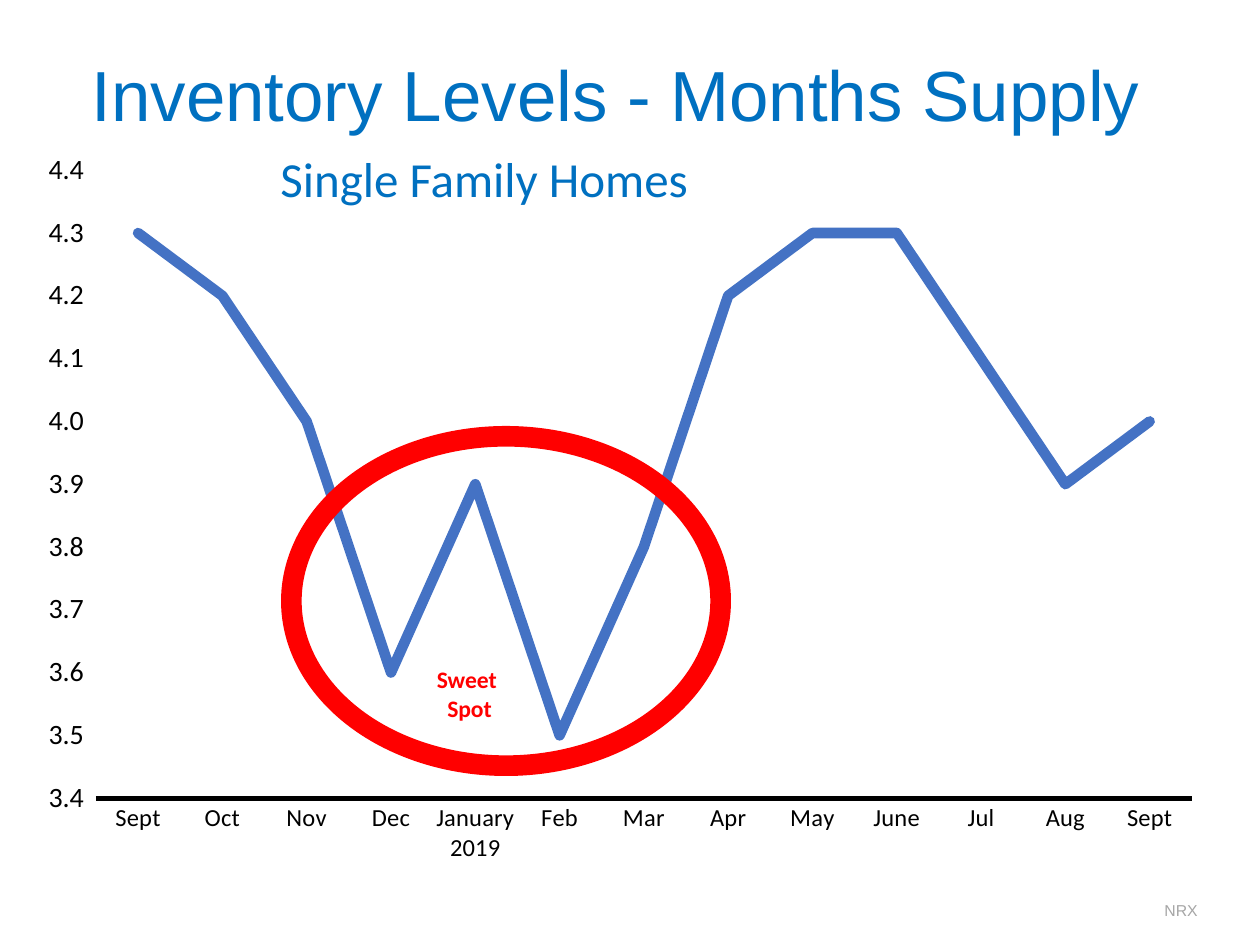
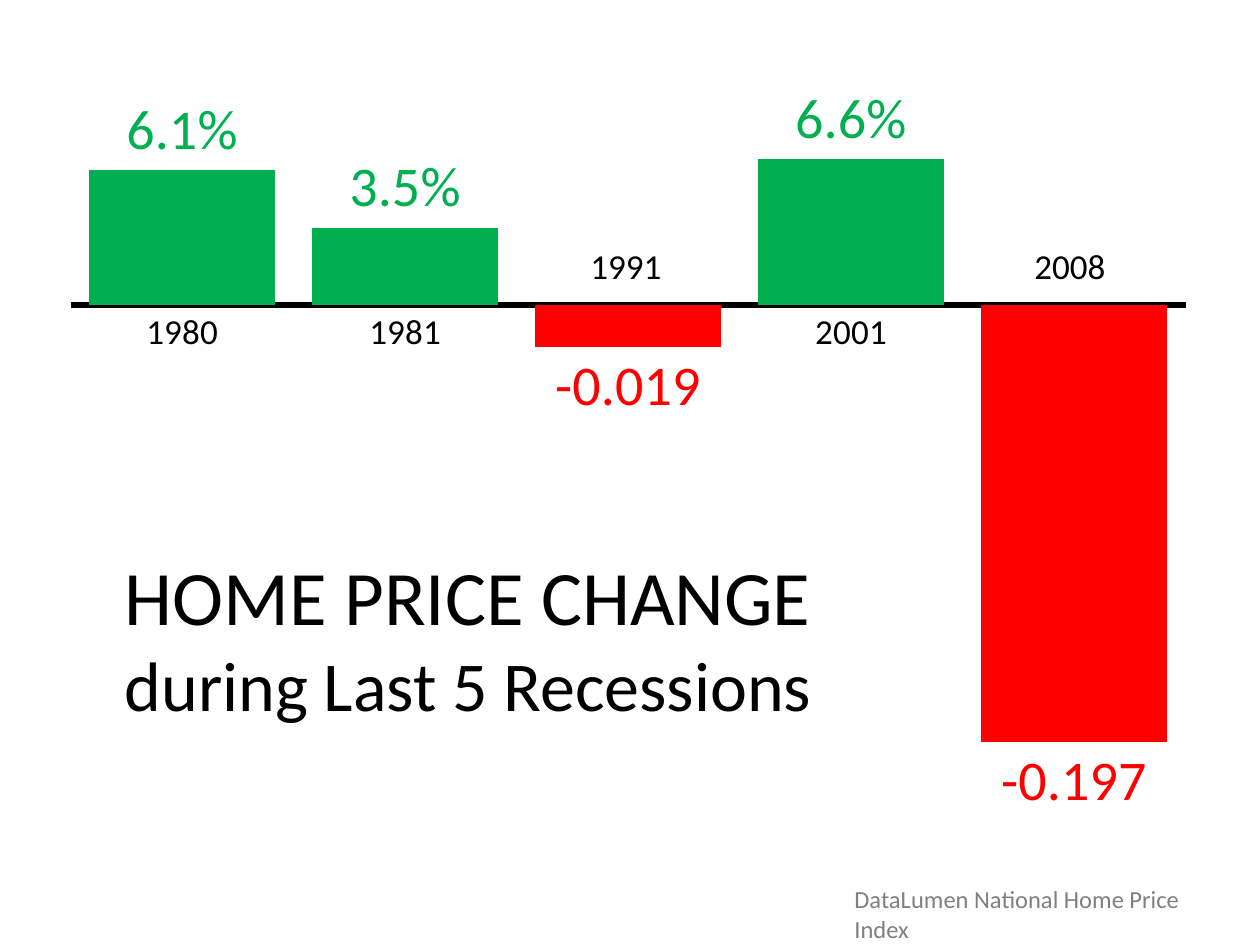
from lxml.etree import SubElement
from pptx import Presentation
from pptx.chart.data import CategoryChartData
from pptx.dml.color import RGBColor
from pptx.enum.chart import XL_CHART_TYPE, XL_LABEL_POSITION, XL_TICK_MARK
from pptx.enum.shapes import MSO_SHAPE
from pptx.enum.text import MSO_ANCHOR, MSO_AUTO_SIZE, PP_ALIGN
from pptx.oxml import parse_xml
from pptx.oxml.ns import nsdecls, qn
from pptx.util import Emu, Pt

BLUE, LINE_BLUE, GREEN, RED = "0070C0", "4472C4", "00B050", "FF0000"
BLACK, WHITE, GRAY, LIGHT_GRAY = "000000", "FFFFFF", "808080", "A6A6A6"

SUPPLY = [
    ("Sept", 4.3), ("Oct", 4.2), ("Nov", 4.0), ("Dec", 3.6),
    ("January 2019", 3.9), ("Feb", 3.5), ("Mar", 3.8), ("Apr", 4.2),
    ("May", 4.3), ("June", 4.3), ("Jul", 4.1), ("Aug", 3.9), ("Sept", 4.0),
]
SUPPLY_AREA = (21, 142, 1190, 785)
SUPPLY_PLOT = (0.063, 0.036, 0.921, 0.8)
SUPPLY_TITLE = [("Inventory Levels - Months Supply", 40.5)]
SUPPLY_TEXTS = [
    ([("Single Family Homes", 28)], (268, 142, 437, 72), {"color": BLUE}),
    ([("Sweet ", 13.5), ("Spot", 13.5)], (417, 659, 105, 144),
     {"color": RED, "bold": True, "align": PP_ALIGN.CENTER}),
    ([("NRX", 9)], (1152, 895, 59, 32), {"color": LIGHT_GRAY, "font": "Arial"}),
]
RING = (281, 426, 450, 350)

PRICES = [("1980", 0.061), ("1981", 0.035), ("", -0.019), ("2001", 0.066), ("", -0.197)]
PRICES_AREA = (50, 64, 1153, 814)
PRICES_PLOT = (0.018, 0.024, 0.967, 0.953)
PRICES_TITLE = [("HOME PRICE CHANGE", 44), ("during Last 5 Recessions", 40)]
PRICES_TEXTS = [
    ([("DataLumen National Home Price Index", 14)], (842, 878, 397, 43), {"color": GRAY}),
    ([("1991", 20)], (578, 238, 97, 55), {}),
    ([("2008", 20)], (1022, 238, 97, 55), {}),
]


def px(length):
    return Emu(round(length * 914400 / 126))


def rgb(color):
    return RGBColor.from_string(color)


def paint(part, color):
    part.fill.solid()
    part.fill.fore_color.rgb = rgb(color)


def set_font(font, size, color, name="Calibri", bold=False):
    font.size, font.name, font.bold = Pt(size), name, bold
    font.color.rgb = rgb(color)


def write(box, lines, color=BLACK, font="Calibri", bold=False,
          align=PP_ALIGN.LEFT, anchor=MSO_ANCHOR.TOP):
    frame = box.text_frame
    frame.word_wrap = False
    frame.auto_size = MSO_AUTO_SIZE.SHAPE_TO_FIT_TEXT
    frame.vertical_anchor = anchor
    for index, (text, size) in enumerate(lines):
        para = frame.add_paragraph() if index else frame.paragraphs[0]
        para.alignment = align
        span = para.add_run()
        span.text = text
        set_font(span.font, size, color, font, bold)


def add_page(deck, title, area, **style):
    page = deck.slides.add_slide(deck.slide_layouts[5])
    box = page.shapes.title
    box.left, box.top, box.width, box.height = map(px, area)
    write(box, title, **style)
    return page


def add_texts(page, texts):
    for lines, area, style in texts:
        write(page.shapes.add_textbox(*map(px, area)), lines, **style)


def add_chart(page, kind, points, area, plot_area, number_format):
    data = CategoryChartData(number_format=number_format)
    data.categories = [label for label, value in points]
    data.add_series("Series 1", [value for label, value in points])
    chart = page.shapes.add_chart(kind, *map(px, area), data).chart
    chart.has_legend = chart.has_title = False
    set_font(chart.font, 10, BLACK)
    chart.plots[0].vary_by_categories = False

    plot = chart.element.find(".//" + qn("c:plotArea"))
    for old in plot.findall(qn("c:layout")):
        plot.remove(old)
    layout = parse_xml(f"<c:layout {nsdecls('c')}/>")
    manual = SubElement(layout, qn("c:manualLayout"))
    settings = [("layoutTarget", "inner"), ("xMode", "edge"), ("yMode", "edge")]
    for name, value in settings + list(zip("xywh", plot_area)):
        SubElement(manual, qn(f"c:{name}")).set("val", str(value))
    plot.insert(0, layout)
    return chart


def format_axes(chart, low, high, step, label_size):
    categories, values = chart.category_axis, chart.value_axis
    categories.major_tick_mark = XL_TICK_MARK.NONE
    categories.format.line.color.rgb = rgb(BLACK)
    categories.format.line.width = Pt(3)
    set_font(categories.tick_labels.font, label_size, BLACK)
    values.minimum_scale, values.maximum_scale, values.major_unit = low, high, step
    values.has_major_gridlines = False
    values.format.line.fill.background()


def build_supply(deck):
    page = add_page(deck, SUPPLY_TITLE, (79, 44, 1103, 98), color=BLUE, font="Arial")
    chart = add_chart(page, XL_CHART_TYPE.LINE, SUPPLY, SUPPLY_AREA, SUPPLY_PLOT, "0.0")
    format_axes(chart, 3.4, 4.4, 0.1, 14)
    labels = chart.value_axis.tick_labels
    labels.number_format, labels.number_format_is_linked = "0.0", False
    set_font(labels.font, 16, BLACK)
    series = chart.plots[0].series[0]
    series.smooth = False
    series.format.line.color.rgb = rgb(LINE_BLUE)
    series.format.line.width = Pt(6)
    stroke = chart.element.find(f".//{qn('c:ser')}/{qn('c:spPr')}/{qn('a:ln')}")
    stroke.set("cap", "rnd")
    SubElement(stroke, qn("a:round"))

    add_texts(page, SUPPLY_TEXTS)
    ring = page.shapes.add_shape(MSO_SHAPE.DONUT, *map(px, RING))
    ring.adjustments[0] = 0.059
    ring.shadow.inherit = False
    paint(ring, RED)
    ring.line.fill.background()


def build_prices(deck):
    page = add_page(deck, PRICES_TITLE, (112, 542, 737, 190), anchor=MSO_ANCHOR.MIDDLE)
    chart = add_chart(page, XL_CHART_TYPE.COLUMN_CLUSTERED, PRICES,
                      PRICES_AREA, PRICES_PLOT, "0.0%")
    format_axes(chart, -0.25, 0.1, 0.05, 20)
    chart.value_axis.visible = False
    plot = chart.plots[0]
    plot.gap_width, plot.overlap = 20, -27
    series = plot.series[0]
    series.invert_if_negative = False
    paint(series.format, BLUE)
    for index, (year, value) in enumerate(PRICES):
        color = GREEN if value > 0 else RED
        point = series.points[index]
        paint(point.format, color)
        label = point.data_label
        if value > 0:
            set_font(label.font, 32, color)
        else:
            span = label.text_frame.paragraphs[0].add_run()
            span.text = str(value)
            set_font(span.font, 32, color)
        label.position = XL_LABEL_POSITION.OUTSIDE_END

    title = page.shapes.title
    paint(title, WHITE)
    title.element.getparent().append(title.element)
    add_texts(page, PRICES_TEXTS)


def main():
    deck = Presentation()
    deck.slide_width, deck.slide_height = px(1260), px(945)
    build_supply(deck)
    build_prices(deck)
    deck.save("out.pptx")


if __name__ == "__main__":
    main()
